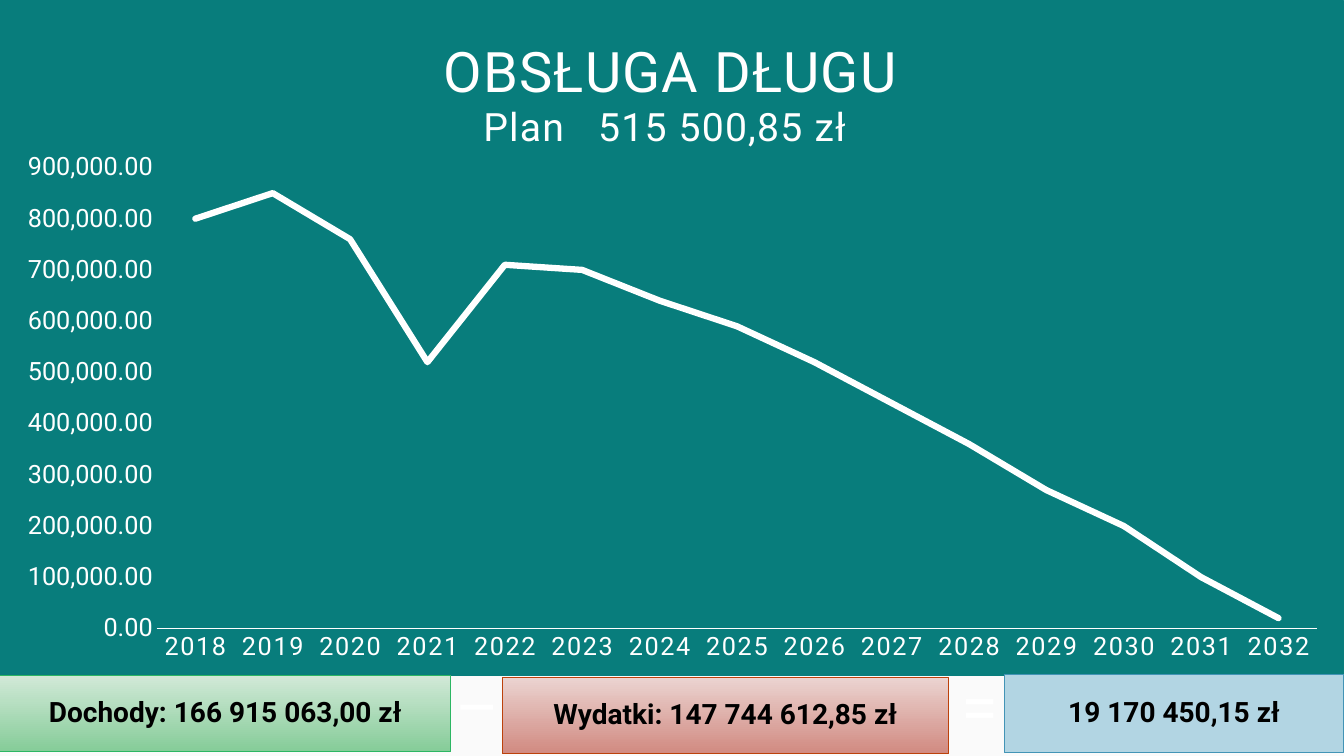
import dataclasses
import typing

import lxml.etree
import pptx
import pptx.chart.data
import pptx.dml.color
import pptx.enum.chart
import pptx.enum.shapes
import pptx.enum.text
import pptx.oxml
import pptx.oxml.ns
import pptx.util

Inches = pptx.util.Inches
Pt = pptx.util.Pt
RGBColor = pptx.dml.color.RGBColor
qn = pptx.oxml.ns.qn

TEAL = RGBColor(0x08, 0x7D, 0x7C)
WHITE = RGBColor(0xFF, 0xFF, 0xFF)
BLACK = RGBColor(0, 0, 0)
PAPER = RGBColor(0xFA, 0xFA, 0xFA)
MINT = RGBColor(0xD2, 0xE9, 0xD8)
GREEN = RGBColor(0x85, 0xCC, 0x98)
LEAF = RGBColor(0x2C, 0xB6, 0x63)
ROSE = RGBColor(0xEB, 0xD4, 0xD1)
RED = RGBColor(0xD1, 0x8A, 0x81)
RUST = RGBColor(0xBC, 0x41, 0x0A)
SKY = RGBColor(0xB2, 0xD5, 0xE3)
BLUE = RGBColor(0x42, 0x94, 0xB6)

FONT = "Roboto"
WIDE, HIGH = 13.33, 6.71  # chart size in inches
YEARS = [str(year) for year in range(2018, 2033)]
COSTS = [800000, 850000, 760000, 520000, 710000, 700000, 640000, 590000,
         520000, 440000, 360000, 270000, 200000, 100000, 20000]


@dataclasses.dataclass
class Box:
    text: str
    left: float
    top: float
    width: float
    height: float
    fills: tuple[RGBColor, ...]
    edge: RGBColor


@dataclasses.dataclass
class Sign:
    text: str
    left: float


BOXES = [
    Box("Wydatki: 147 744 612,85 zł", 4.98, 6.72, 4.43, 0.76, (ROSE, RED), RUST),
    Box("19 170 450,15 zł", 9.96, 6.69, 3.37, 0.78, (SKY,), BLUE),
    Box("Dochody: 166 915 063,00 zł", 0, 6.7, 4.47, 0.76, (MINT, GREEN), LEAF),
]
SIGNS = [Sign("–", 4.31), Sign("=", 9.29)]


def style(item: typing.Any, **form: typing.Any) -> None:
    for name, value in form.items():
        setattr(item, name, value)


def ink(font: typing.Any, size: float, color: RGBColor, bold: bool = False) -> None:
    style(font, name=FONT, size=Pt(size), bold=bold)
    font.color.rgb = color


def place(parent: typing.Any, index: int, **spots: typing.Any) -> None:
    """Give a chart part a manual layout; lengths are in inches."""
    old = parent.find(qn("c:layout"))
    if old is not None:
        parent.remove(old)
    layout = lxml.etree.Element(qn("c:layout"))
    manual = lxml.etree.SubElement(layout, qn("c:manualLayout"))
    whole = {"x": WIDE, "w": WIDE, "y": HIGH, "h": HIGH}
    for tag, value in spots.items():
        share = value / whole[tag] if tag in whole else value
        lxml.etree.SubElement(manual, qn(f"c:{tag}")).set("val", str(share))
    parent.insert(index, layout)


def paint(chart: typing.Any) -> None:
    """Fill and outline the chart area."""
    area = pptx.oxml.parse_xml(
        f'<c:spPr {pptx.oxml.ns.nsdecls("c", "a")}>'
        f'<a:solidFill><a:srgbClr val="{TEAL}"/></a:solidFill>'
        f'<a:ln w="9525"><a:solidFill><a:srgbClr val="{TEAL}"/></a:solidFill></a:ln>'
        '</c:spPr>')
    chart.element.find(qn("c:chart")).addnext(area)


def add_title(chart: typing.Any) -> None:
    title = chart.chart_title
    frame = title.text_frame
    lines = [("OBSŁUGA DŁUGU", 40), ("Plan   515 500,85 zł ", 28)]
    for index, (text, size) in enumerate(lines):
        para = frame.add_paragraph() if index else frame.paragraphs[0]
        para.alignment = pptx.enum.text.PP_ALIGN.CENTER
        run = para.add_run()
        run.text = text
        ink(run.font, size, WHITE)
        run.font._element.set("spc", "100")
    place(title._element, 1, xMode="edge", yMode="edge", x=4.37, y=0.35)


def add_axes(chart: typing.Any) -> None:
    years, costs = chart.category_axis, chart.value_axis
    none = pptx.enum.chart.XL_TICK_MARK.NONE
    for axis in (years, costs):
        style(axis, has_major_gridlines=False, major_tick_mark=none,
              minor_tick_mark=none)
        ink(axis.tick_labels.font, 18, WHITE)
    years.format.line.color.rgb = WHITE
    years.format.line.width = Pt(1)
    years._element.find(".//" + qn("a:defRPr")).set("spc", "120")
    costs.format.line.fill.background()
    style(costs, minimum_scale=0, maximum_scale=900000, major_unit=100000)
    style(costs.tick_labels, number_format="#,##0.00",
          number_format_is_linked=False)


def add_chart(slide: typing.Any) -> None:
    data = pptx.chart.data.CategoryChartData()
    data.categories = YEARS
    data.add_series("Series 1", COSTS)
    chart = slide.shapes.add_chart(
        pptx.enum.chart.XL_CHART_TYPE.LINE, 0, 0, Inches(WIDE), Inches(HIGH),
        data).chart
    style(chart, has_legend=False, has_title=True)
    ink(chart.font, 18, BLACK)
    paint(chart)
    add_title(chart)
    add_axes(chart)
    chart.plots[0].vary_by_categories = False
    debt = chart.plots[0].series[0]
    debt.smooth = False
    debt.marker.style = pptx.enum.chart.XL_MARKER_STYLE.NONE
    debt.format.line.color.rgb = WHITE
    debt.format.line.width = Pt(4.5)
    debt._element.find(".//" + qn("a:ln")).set("cap", "rnd")
    place(chart.element.find(".//" + qn("c:plotArea")), 0, layoutTarget="inner",
          xMode="edge", yMode="edge", x=1.55, y=1.66, w=11.52, h=4.58)


def write(frame: typing.Any, text: str, size: float, color: RGBColor,
          bold: bool = False) -> None:
    para = frame.paragraphs[0]
    para.text = text
    para.alignment = pptx.enum.text.PP_ALIGN.CENTER
    ink(para.runs[0].font, size, color, bold)


def add_box(slide: typing.Any, box: Box) -> None:
    shape = slide.shapes.add_shape(
        pptx.enum.shapes.MSO_SHAPE.RECTANGLE, Inches(box.left), Inches(box.top),
        Inches(box.width), Inches(box.height))
    shape.shadow.inherit = False
    if len(box.fills) > 1:
        shape.fill.gradient()
        shape.fill.gradient_angle = 270
        for stop, color in zip(shape.fill.gradient_stops, box.fills):
            stop.color.rgb = color
    else:
        shape.fill.solid()
        shape.fill.fore_color.rgb = box.fills[0]
    shape.line.color.rgb = box.edge
    shape.line.width = Pt(0.75)
    frame, pad = shape.text_frame, Inches(0.27)
    style(frame, word_wrap=True, margin_left=pad, margin_right=pad,
          margin_top=pad, margin_bottom=pad,
          vertical_anchor=pptx.enum.text.MSO_ANCHOR.MIDDLE)
    write(frame, box.text, 20, BLACK, True)
    frame.paragraphs[0].line_spacing = 0.9


def add_sign(slide: typing.Any, sign: Sign) -> None:
    frame = slide.shapes.add_textbox(
        Inches(sign.left), Inches(6.54), Inches(0.86), Inches(0.91)).text_frame
    style(frame, word_wrap=True,
          auto_size=pptx.enum.text.MSO_AUTO_SIZE.SHAPE_TO_FIT_TEXT)
    write(frame, sign.text, 48, WHITE)


def main() -> None:
    deck = pptx.Presentation()
    style(deck, slide_width=Inches(13.33), slide_height=Inches(7.5))
    slide = deck.slides.add_slide(deck.slide_layouts[6])
    slide.background.fill.solid()
    slide.background.fill.fore_color.rgb = PAPER
    add_chart(slide)
    for sign in SIGNS:
        add_sign(slide, sign)
    for box in BOXES:
        add_box(slide, box)
    deck.save("out.pptx")


if __name__ == "__main__":
    main()
